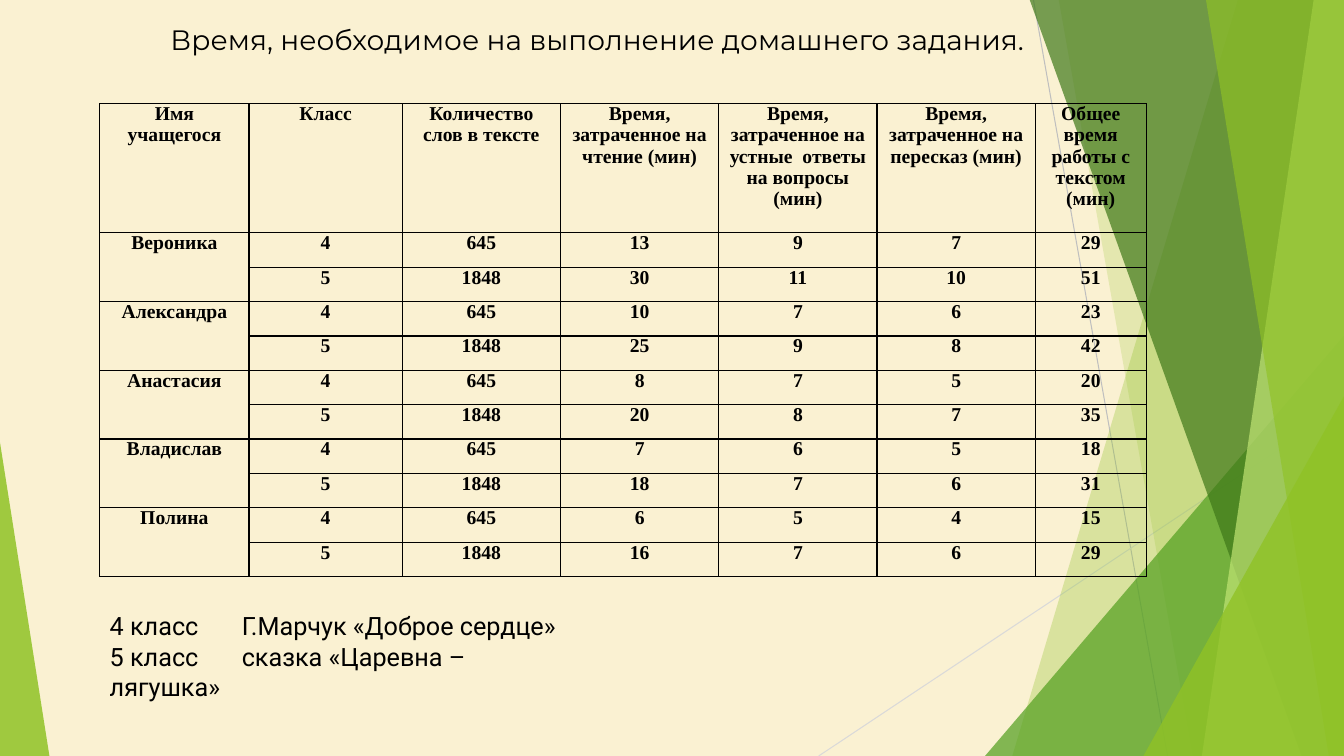
from dataclasses import dataclass

from lxml import etree
from pptx import Presentation
from pptx import util as u
from pptx.dml.color import RGBColor
from pptx.enum import shapes, text
from pptx.oxml import ns


@dataclass(frozen=True)
class Theme:
    """Colours, fonts and type sizes of the slide."""
    background: str = "FAF1D2"
    ink: str = "000000"
    green: str = "90C226"
    leaf: str = "54A021"
    forest: str = "3F7819"
    lime: str = "C0E474"
    grey: str = "BFBFBF"
    pale_grey: str = "D9D9D9"
    title_font: str = "Montserrat"
    table_font: str = "Times New Roman"
    note_font: str = "Roboto"
    title_size: int = 20
    table_size: int = 14
    note_size: int = 18


def apply(target, values):
    """Set every attribute named in a dict of format values."""
    for name, value in values.items():
        setattr(target, name, value)


def add_xml(parent, tag, **attributes):
    """Append a DrawingML child element and return it."""
    return etree.SubElement(parent, ns.qn(tag), attributes)


class SlideBuilder:
    """Draws elements on the current slide in one theme."""

    def __init__(self, presentation, theme):
        """Add a title-only slide with the theme background."""
        self.theme = theme
        self.slide = presentation.slides.add_slide(presentation.slide_layouts[5])
        fill = self.slide.background.fill
        fill.solid()
        fill.fore_color.rgb = RGBColor.from_string(theme.background)

    def add_text(self, paragraph, wording, font, size, bold=False):
        """Add one formatted run to a paragraph."""
        run = paragraph.add_run()
        run.text = wording
        apply(run.font, {"name": font, "size": u.Pt(size), "bold": bold})
        run.font.color.rgb = RGBColor.from_string(self.theme.ink)

    def title(self, wording, left, top, width, height):
        """Place the title placeholder in front and fill it."""
        shape = self.slide.shapes.title
        apply(shape, {"left": u.Inches(left), "top": u.Inches(top),
                      "width": u.Inches(width), "height": u.Inches(height)})
        apply(shape.text_frame, {"word_wrap": True,
                                 "auto_size": text.MSO_AUTO_SIZE.NONE,
                                 "vertical_anchor": text.MSO_ANCHOR.MIDDLE})
        paragraph = shape.text_frame.paragraphs[0]
        paragraph.alignment = text.PP_ALIGN.LEFT
        self.add_text(paragraph, wording, self.theme.title_font, self.theme.title_size)
        shape._element.getparent().append(shape._element)

    def line(self, start, end, color):
        """Draw a thin straight line."""
        points = [u.Inches(value) for value in (*start, *end)]
        connector = self.slide.shapes.add_connector(
            shapes.MSO_CONNECTOR.STRAIGHT, *points)
        connector.line.width = u.Pt(0.75)
        connector.line.color.rgb = RGBColor.from_string(color)
        add_xml(connector._element.spPr, "a:effectLst")

    def tint(self, shape, color, opacity):
        """Fill a shape with a translucent colour and no outline."""
        shape.shadow.inherit = False
        shape.line.fill.background()
        shape.fill.solid()
        shape.fill.fore_color.rgb = RGBColor.from_string(color)
        color_element = shape._element.spPr.find(".//" + ns.qn("a:srgbClr"))
        add_xml(color_element, "a:alpha", val=str(opacity * 1000))

    def band(self, top_left, bottom_left, color, opacity):
        """Draw a slanted band reaching the right edge of the slide."""
        top, right, bottom = -0.01, 13.33, 7.5
        corners = [(top_left, top), (right, top), (right, bottom), (bottom_left, bottom)]
        points = [(u.Inches(x), u.Inches(y)) for x, y in corners]
        builder = self.slide.shapes.build_freeform(*points[0])
        builder.add_line_segments(points[1:], close=True)
        self.tint(builder.convert_to_shape(), color, opacity)

    def triangle(self, left, top, width, height, apex, color, opacity):
        """Draw a translucent triangle with its apex at a share of the width."""
        shape = self.slide.shapes.add_shape(
            shapes.MSO_SHAPE.ISOSCELES_TRIANGLE,
            u.Inches(left), u.Inches(top), u.Inches(width), u.Inches(height))
        shape.adjustments[0] = apex
        self.tint(shape, color, opacity)

    def cell(self, cell, wording):
        """Format a table cell with borders and centred bold text."""
        properties = cell._tc.get_or_add_tcPr()
        for side in ("a:lnL", "a:lnR", "a:lnT", "a:lnB"):
            border = add_xml(properties, side, w=str(u.Pt(1)))
            add_xml(add_xml(border, "a:solidFill"), "a:srgbClr", val=self.theme.ink)
        cell.fill.background()
        apply(cell, {"margin_left": u.Inches(0.07), "margin_right": u.Inches(0.07),
                     "margin_top": 0, "margin_bottom": 0})
        paragraph = cell.text_frame.paragraphs[0]
        apply(paragraph, {"alignment": text.PP_ALIGN.CENTER,
                          "line_spacing": u.Pt(15.1), "space_after": u.Pt(7.5)})
        if wording:
            self.add_text(paragraph, wording, self.theme.table_font,
                          self.theme.table_size, bold=True)

    def table(self, rows, left, top, widths, heights):
        """Draw a table, merging each named row with the unnamed row below."""
        table = self.slide.shapes.add_table(
            len(rows), len(widths), u.Inches(left), u.Inches(top),
            u.Inches(sum(widths)), u.Inches(sum(heights))).table
        apply(table, {"first_row": False, "horz_banding": False})
        for column, width in zip(table.columns, widths):
            column.width = u.Inches(width)
        for index, (row, height, wordings) in enumerate(zip(table.rows, heights, rows)):
            row.height = u.Inches(height)
            for cell, wording in zip(row.cells, wordings):
                self.cell(cell, wording)
            if not wordings[0]:
                table.cell(index - 1, 0).merge(table.cell(index, 0))

    def note(self, entries, left, top, width, height, tab):
        """Place label and text pairs aligned on a tab stop."""
        frame = self.slide.shapes.add_textbox(
            u.Inches(left), u.Inches(top), u.Inches(width), u.Inches(height)).text_frame
        frame.word_wrap = True
        for index, entry in enumerate(entries):
            paragraph = frame.add_paragraph() if index else frame.paragraphs[0]
            tabs = add_xml(paragraph._p.get_or_add_pPr(), "a:tabLst")
            add_xml(tabs, "a:tab", pos=str(u.Inches(tab)), algn="l")
            self.add_text(paragraph, "\t".join(entry), self.theme.note_font,
                          self.theme.note_size)


HEADER = ["Имя учащегося", "Класс", "Количество слов в тексте",
          "Время, затраченное на чтение (мин)",
          "Время, затраченное на устные  ответы на вопросы (мин)",
          "Время, затраченное на пересказ (мин)",
          "Общее время работы с текстом (мин)"]
GRADES = [(4, 645), (5, 1848)]
PUPIL_MINUTES = {
    "Вероника": [(13, 9, 7, 29), (30, 11, 10, 51)],
    "Александра": [(10, 7, 6, 23), (25, 9, 8, 42)],
    "Анастасия": [(8, 7, 5, 20), (20, 8, 7, 35)],
    "Владислав": [(7, 6, 5, 18), (18, 7, 6, 31)],
    "Полина": [(6, 5, 4, 15), (16, 7, 6, 29)],
}


def main():
    """Build the homework time slide."""
    presentation = Presentation()
    apply(presentation, {"slide_width": u.Inches(13.33), "slide_height": u.Inches(7.5)})
    theme = Theme()
    builder = SlideBuilder(presentation, theme)

    builder.line((10.25, 0), (11.58, 7.5), theme.grey)
    builder.line((13.33, 4.03), (8.12, 7.5), theme.pale_grey)
    builder.band(12.28, 10.04, theme.green, 30)
    builder.band(10.5, 11.83, theme.green, 20)
    builder.triangle(9.77, 3.33, 3.56, 4.17, 1, theme.leaf, 72)
    builder.band(10.21, 12.91, theme.forest, 70)
    builder.band(13.03, 11.92, theme.lime, 70)
    builder.band(11.96, 13.18, theme.green, 65)
    builder.triangle(11.34, 3.93, 1.99, 3.57, 1, theme.green, 80)
    builder.triangle(0, 4.39, 0.49, 3.11, 0, theme.green, 85)

    builder.title("Время, необходимое на выполнение домашнего задания.",
                  1.59, 0.14, 9.4, 0.49)
    rows = [HEADER]
    for pupil, results in PUPIL_MINUTES.items():
        for name, grade, minutes in zip((pupil, ""), GRADES, results):
            rows.append([name, *map(str, grade + minutes)])
    body_height = (4.69 - 1.28) / (len(rows) - 1)
    builder.table(rows, 0.99, 1.03, [1.48, 1.52] + [1.57] * 4 + [1.1],
                  [1.28] + [body_height] * (len(rows) - 1))
    builder.note([("4 класс", "Г.Марчук «Доброе сердце»"),
                  ("5 класс", "сказка «Царевна – лягушка»")],
                 0.99, 6.01, 4.8, 0.71, tab=1.31)
    presentation.save("out.pptx")


if __name__ == "__main__":
    main()
